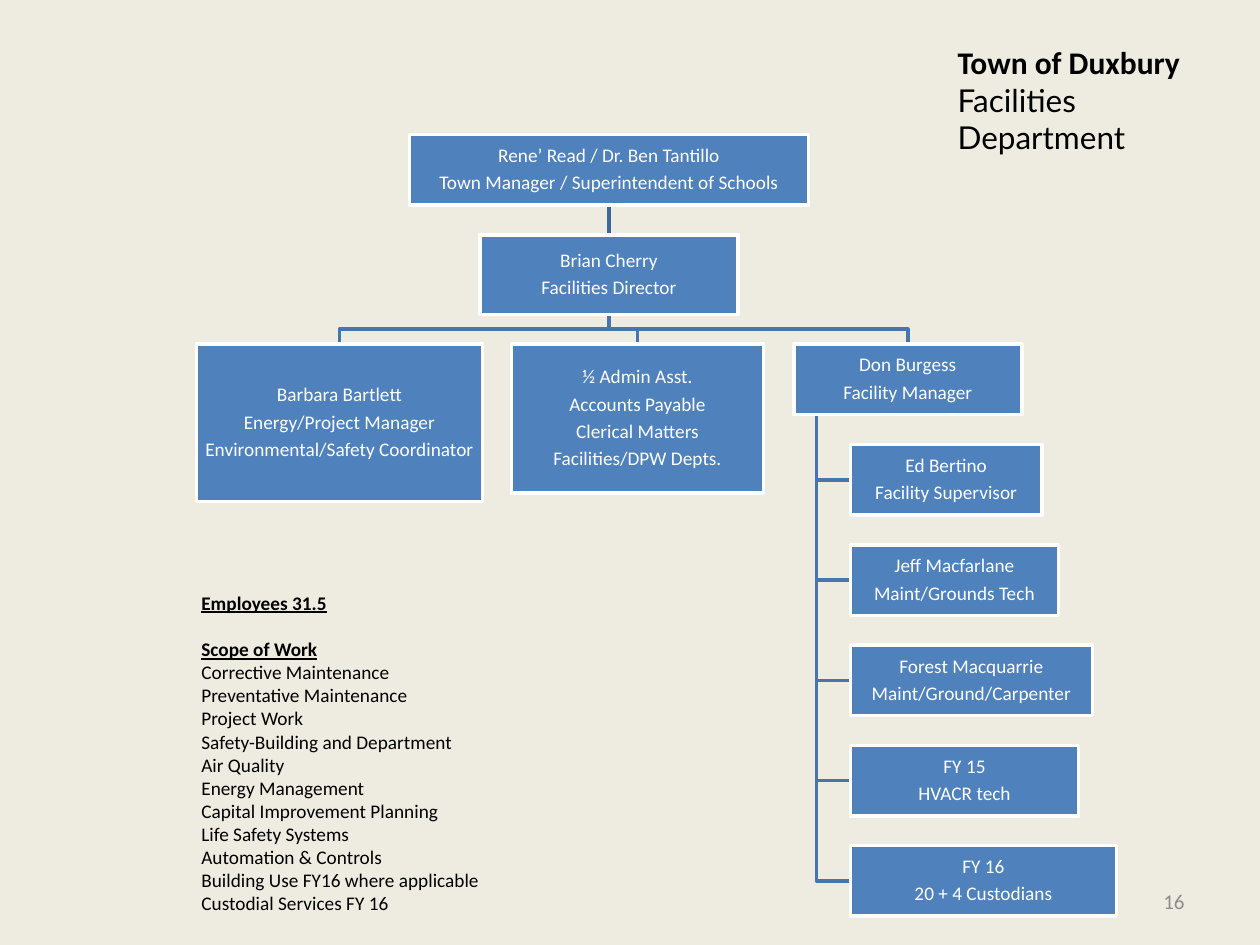
"""Build the Facilities Department organization chart slide."""
from lxml import etree
from pptx import Presentation
from pptx import util as u
from pptx.dml.color import RGBColor
from pptx.enum import shapes, text
from pptx.oxml import ns

Pt = u.Pt
PAPER = RGBColor(0xEE, 0xEC, 0xE1)
BLUE = RGBColor(0x4F, 0x81, 0xBD)
BRANCH = RGBColor(0x48, 0x75, 0xAC)
STEM = RGBColor(0x3F, 0x67, 0x97)
WHITE = RGBColor(0xFF, 0xFF, 0xFF)
BLACK = RGBColor(0, 0, 0)
GRAY = RGBColor(0x8C, 0x8C, 0x8C)

LEFT, CENTER, RIGHT = text.PP_ALIGN.LEFT, text.PP_ALIGN.CENTER, text.PP_ALIGN.RIGHT
TOP, MIDDLE, BOTTOM = text.MSO_ANCHOR.TOP, text.MSO_ANCHOR.MIDDLE, text.MSO_ANCHOR.BOTTOM

LEADERS = [
    ((234, 77, 228, 40.3),
     ["Rene’ Read / Dr. Ben Tantillo", "Town Manager / Superintendent of Schools"]),
    ((274.2, 134.2, 147.6, 45.5), ["Brian Cherry", "Facilities Director"]),
]
REPORTS = [
    (112.3, 163.4, 90, ["Barbara Bartlett", "Energy/Project Manager",
                        "Environmental/Safety Coordinator"]),
    (292.3, 144, 85, ["½ Admin Asst.", "Accounts Payable", "Clerical Matters",
                      "Facilities/DPW Depts."]),
    (453.6, 130.3, 40.3, ["Don Burgess", "Facility Manager"]),
]
CREW = [
    (109.4, ["Ed Bertino", "Facility Supervisor"]),
    (118.8, ["Jeff Macfarlane", "Maint/Grounds Tech"]),
    (138.2, ["Forest Macquarrie", "Maint/Ground/Carpenter"]),
    (130.3, ["FY 15", "HVACR tech"]),
    (151.9, ["FY 16", "20 + 4 Custodians"]),
]
HEADINGS = ["Employees 31.5", "Scope of Work"]
SCOPE = [
    "Corrective Maintenance", "Preventative Maintenance", "Project Work",
    "Safety-Building and Department", "Air Quality", "Energy Management",
    "Capital Improvement Planning", "Life Safety Systems", "Automation & Controls",
    "Building Use FY16 where applicable", "Custodial Services FY 16",
]


def assign(target, values):
    """Set each named attribute on the target."""
    for name, value in values.items():
        setattr(target, name, value)


class ChartSlide:
    """Hold the chart style and the current slide."""

    box_frame = dict(word_wrap=True, vertical_anchor=MIDDLE, margin_left=Pt(0.7),
                     margin_right=Pt(0.7), margin_top=Pt(0.7), margin_bottom=Pt(0.7))
    box_paragraph = dict(alignment=CENTER, line_spacing=0.9, space_after=Pt(3.65))
    line_width = Pt(2)

    def __init__(self, slide):
        self.slide = slide
        slide.background.fill.solid()
        slide.background.fill.fore_color.rgb = PAPER

    def fill_text(self, frame, lines, color, size=11, **paragraph_format):
        """Fill a frame with one paragraph per line and return the paragraphs."""
        frame.text = "\n".join(lines)
        for paragraph in frame.paragraphs:
            assign(paragraph, paragraph_format)
            font = paragraph.runs[0].font
            assign(font, dict(name="Calibri", size=Pt(size), bold=False))
            font.color.rgb = color
        return frame.paragraphs

    def stroke(self, line, color):
        """Give a line its colour and the chart's line width."""
        line.color.rgb = color
        line.width = self.line_width

    def send_to_back(self, shape):
        """Place a shape behind everything else."""
        shape.element.getparent().insert(2, shape.element)

    def title(self, bounds, lines):
        """Move and format the title, and return its paragraphs."""
        heading = self.slide.shapes.title
        assign(heading, dict(zip(("left", "top", "width", "height"), map(Pt, bounds))))
        assign(heading.text_frame, dict(word_wrap=True, vertical_anchor=TOP,
                                        auto_size=text.MSO_AUTO_SIZE.NONE))
        return self.fill_text(heading.text_frame, lines, BLACK, 18, alignment=LEFT)

    def box(self, bounds, lines):
        """Add a position box."""
        box = self.slide.shapes.add_shape(shapes.MSO_SHAPE.RECTANGLE, *map(Pt, bounds))
        box.shadow.inherit = False
        box.fill.solid()
        box.fill.fore_color.rgb = BLUE
        self.stroke(box.line, WHITE)
        assign(box.text_frame, self.box_frame)
        self.fill_text(box.text_frame, lines, WHITE, **self.box_paragraph)
        return box

    def label(self, bounds, lines, color, size=11, anchor=MIDDLE, alignment=LEFT):
        """Add a text box and return its paragraphs."""
        frame = self.slide.shapes.add_textbox(*map(Pt, bounds)).text_frame
        assign(frame, dict(word_wrap=True, vertical_anchor=anchor))
        return self.fill_text(frame, lines, color, size, alignment=alignment)

    def stem(self, upper, lower):
        """Join two stacked boxes with a straight connector."""
        stem = self.slide.shapes.add_connector(shapes.MSO_CONNECTOR.STRAIGHT, 0, 0, 0, 0)
        stem.begin_connect(upper, 2)
        stem.end_connect(lower, 0)
        self.stroke(stem.line, STEM)
        etree.SubElement(stem.element.spPr, ns.qn("a:effectLst"))
        self.send_to_back(stem)

    def branch(self, start, *corners):
        """Draw an angled line through the given points."""
        builder = self.slide.shapes.build_freeform(*start, scale=1.0)
        builder.add_line_segments(corners, close=False)
        branch = builder.convert_to_shape()
        branch.shadow.inherit = False
        branch.fill.background()
        self.stroke(branch.line, BRANCH)
        self.send_to_back(branch)


def main():
    """Build and save the presentation."""
    deck = Presentation()
    deck.slide_width, deck.slide_height = Pt(720), Pt(540)
    chart = ChartSlide(deck.slides.add_slide(deck.slide_layouts[5]))

    department = chart.title((540, 20.9, 148.3, 51.1),
                             ["Town of Duxbury", "Facilities Department"])
    department[0].runs[0].font.bold = True
    department[1].runs[0].font.name = "Lato"

    manager, director = [chart.box(bounds, lines) for bounds, lines in LEADERS]
    reports = [chart.box((left, 196.6, width, height), lines)
               for left, width, height, lines in REPORTS]
    crew = [chart.box((486, 254.1 + 57.3 * row, width, 40.3), lines)
            for row, (width, lines) in enumerate(CREW)]

    chart.stem(manager, director)
    director_x = director.left + director.width // 2
    director_bottom = director.top + director.height
    for report in reports:
        report_x = report.left + report.width // 2
        middle_y = (director_bottom + report.top) // 2
        chart.branch((director_x, director_bottom), (director_x, middle_y),
                     (report_x, middle_y), (report_x, report.top))

    supervisor = reports[-1]
    trunk_x = supervisor.left + supervisor.width // 10
    for member in crew:
        member_y = member.top + member.height // 2
        chart.branch((trunk_x, supervisor.top + supervisor.height),
                     (trunk_x, member_y), (member.left, member_y))

    scope = chart.label((108, 306, 180, 220.3), HEADINGS + SCOPE, BLACK, anchor=BOTTOM)
    for heading in scope[:len(HEADINGS)]:
        assign(heading.runs[0].font, dict(bold=True, underline=True))
    scope[1].space_before = Pt(13.4)
    chart.label((516, 500.5, 168, 28.8), ["16"], GRAY, size=12, alignment=RIGHT)

    deck.save("out.pptx")


if __name__ == "__main__":
    main()
